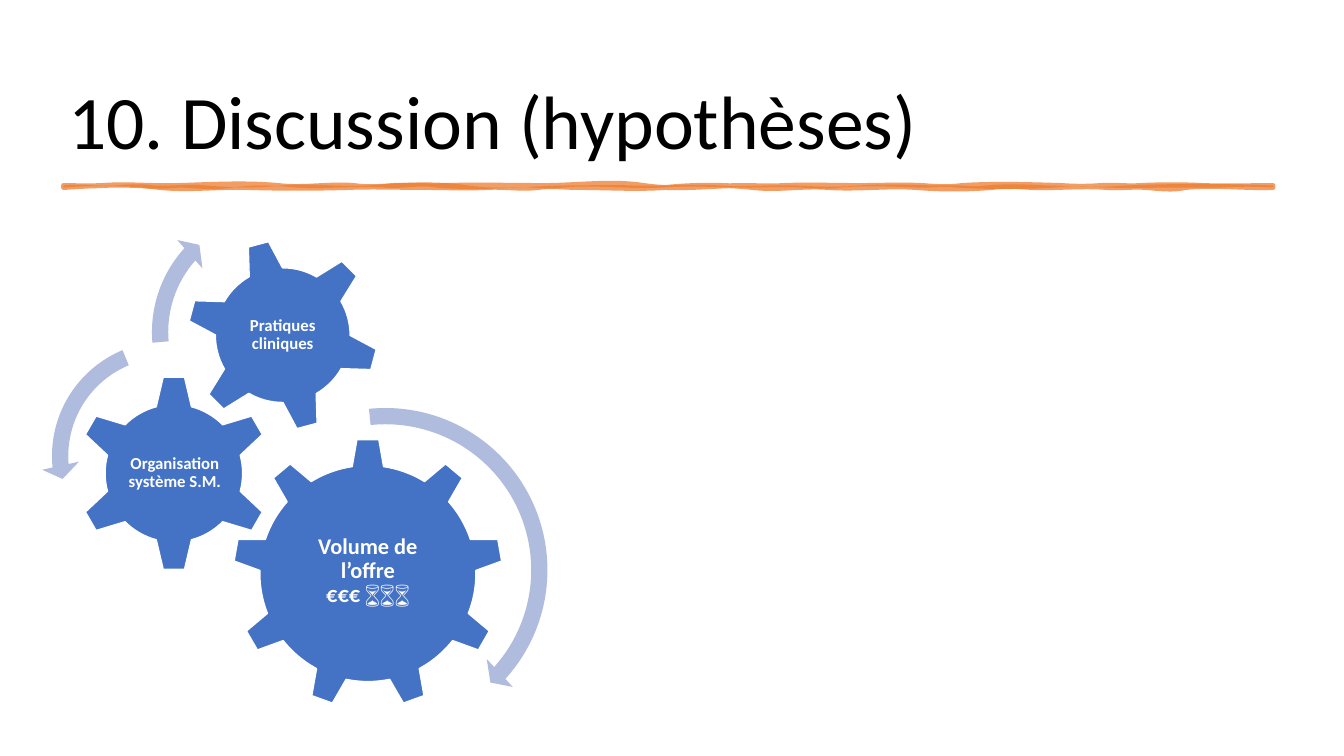
import dataclasses
import lxml.etree
import pptx
import pptx.dml.color
import pptx.enum.shapes
import pptx.enum.text
import pptx.oxml.ns
import pptx.util

Kind = pptx.enum.shapes.MSO_SHAPE
Align = pptx.enum.text.PP_ALIGN
Anchor = pptx.enum.text.MSO_ANCHOR


@dataclasses.dataclass(frozen=True)
class Theme:
    font: str = "Calibri"
    ink: str = "000000"
    white: str = "FFFFFF"
    gear: str = "4472C4"
    arrow: str = "B0BCDE"
    brush: str = "ED7D31"
    alpha: int = 75
    title: int = 54
    large: int = 16
    small: int = 12
    edge: float = 1
    stroke: float = 3.5
    lead: float = 0.9


COLS, ROWS = 160, 90
LEFT, TOP = 7.56, 22.08
WIDE, HIGH = 144, 0.24
STEP, RISE = 0.36, 0.12

LINE = (
    [(13, 0, 1), (25, -2, 1), (33, -1, -3), (25, 3, -2), (13, 2, 1), (17, -1, 1),
     (33, -1, 0), (33, 0, -5), (33, 5, 0), (13, 0, 1), (25, -1, 0), (21, 0, -1),
     (13, 1, 2), (33, -2, -1), (13, 1, 1), (13, -1, 1), (21, -1, -1), (23, 1, 0)],
    [(29, 1, -3), (13, 3, 1), (13, -1, 1), (25, -2, 1), (13, -1, -2), (25, 2, 2),
     (29, -2, 2), (25, -2, 3), (29, -3, -3), (29, 2, 0), (13, 0, -2), (17, 2, -1),
     (21, 1, 0), (25, 0, -1), (33, 1, 1), (29, -1, 3), (32, -4, -2)],
)
BODY = (
    [(17, -2, 1), (13, -1, -2), (17, 1, -2), (25, 2, 3), (29, -3, 2), (33, -3, -5),
     (33, 5, 0), (21, 0, -1), (29, 1, -2), (25, 2, -1), (21, 1, 2), (29, -2, 0),
     (13, -1, 2), (21, -2, -1), (25, 1, 2), (49, -2, -2)],
    [(17, -1, -1), (13, 0, 0), (25, 0, 1), (17, -1, -2), (33, 2, 2), (13, -2, 1),
     (25, -1, -2), (13, 2, 1), (17, -1, 0), (29, 0, -2), (33, 2, -3), (17, 3, -2),
     (25, 2, 2), (17, -3, 2), (29, -2, 2), (21, -2, -3), (17, 3, 1), (13, 1, 2),
     (26, -2, -2)],
)


def trace(col, row, way, waves):
    for width, first, second in waves:
        span = way * width * STEP
        yield [(col + span / 3, row + first * RISE),
               (col + span * 2 / 3, row + second * RISE),
               (col + span, row)]
        col += span


def color(text):
    return pptx.dml.color.RGBColor.from_string(text)


def add(node, name, **attrs):
    return lxml.etree.SubElement(node, pptx.oxml.ns.qn("a:" + name), attrs)


def find(shape, name):
    return list(shape.element.spPr.iter(pptx.oxml.ns.qn("a:" + name)))


def write(frame, text, *, size, ink, font, lead, bold=False,
          align=Align.LEFT, anchor=Anchor.MIDDLE, inset=None):
    frame.word_wrap = True
    frame.vertical_anchor = anchor
    if inset is not None:
        frame.margin_left = frame.margin_right = inset
        frame.margin_top = frame.margin_bottom = inset
    para = frame.paragraphs[0]
    para.text = text
    para.alignment = align
    para.line_spacing = lead
    for run in para.runs:
        run.font.name = font
        run.font.size = pptx.util.Pt(size)
        run.font.bold = bold
        run.font.color.rgb = color(ink)


class Board:
    def __init__(self, deck, theme):
        self.theme = theme
        self.unit = deck.slide_width / COLS
        self.slide = deck.slides.add_slide(deck.slide_layouts[6])
        self.shapes = self.slide.shapes

    def cells(self, *spans):
        return [round(span * self.unit) for span in spans]

    def paint(self, shape, fill, line=None, width=1):
        shape.shadow.inherit = False
        shape.fill.solid()
        shape.fill.fore_color.rgb = color(fill)
        if line:
            shape.line.color.rgb = color(line)
            shape.line.width = pptx.util.Pt(width)
        else:
            shape.line.fill.background()

    def label(self, text, box, **style):
        shape = self.shapes.add_textbox(*self.cells(*box))
        write(shape.text_frame, text, font=self.theme.font,
              lead=self.theme.lead, **style)

    def title(self, text, box):
        self.label(text, box, size=self.theme.title, ink=self.theme.ink,
                   anchor=Anchor.BOTTOM)

    def gear(self, kind, col, row, size, text, box, type_size, turn=0):
        shape = self.shapes.add_shape(kind, *self.cells(col, row, size, size))
        shape.rotation = turn
        self.paint(shape, self.theme.gear, self.theme.white, self.theme.edge)
        self.label(text, box, size=type_size, ink=self.theme.white, bold=True,
                   align=Align.CENTER, inset=pptx.util.Inches(0.02))

    def arrow(self, kind, col, row, size, thick, tip, bends):
        shape = self.shapes.add_shape(kind, *self.cells(col, row, size, size))
        for index, bend in enumerate((thick / 100, *bends, tip / 100)):
            shape.adjustments[index] = bend
        self.paint(shape, self.theme.arrow)

    def spot(self, node, point):
        col, row = self.cells(*point)
        add(node, "pt", x=str(col), y=str(row))

    def curve(self, paths, waves, **flags):
        wide, high = self.cells(WIDE, HIGH)
        route = add(paths, "path", w=str(wide), h=str(high), **flags)
        upper, lower = waves
        self.spot(add(route, "moveTo"), (0, 0))
        for bend in trace(0, 0, 1, upper):
            self.bend(route, bend)
        self.spot(add(route, "lnTo"), (WIDE, HIGH))
        for bend in trace(WIDE, HIGH, -1, lower):
            self.bend(route, bend)
        add(route, "close")

    def bend(self, route, points):
        node = add(route, "cubicBezTo")
        for point in points:
            self.spot(node, point)

    def brush(self):
        right, low = LEFT + WIDE, TOP + HIGH
        build = self.shapes.build_freeform(*self.cells(LEFT, TOP))
        build.add_line_segments([self.cells(right, TOP), self.cells(right, low),
                                 self.cells(LEFT, low)])
        shape = build.convert_to_shape()
        paths = find(shape, "pathLst")[0]
        for old in list(paths):
            paths.remove(old)
        self.curve(paths, LINE, fill="none")
        self.curve(paths, BODY, stroke="0")
        self.paint(shape, self.theme.brush, self.theme.brush, self.theme.stroke)
        for node in find(shape, "srgbClr"):
            add(node, "alpha", val=str(self.theme.alpha * 1000))


def main():
    deck = pptx.Presentation()
    deck.slide_width = pptx.util.Inches(COLS / 12)
    deck.slide_height = pptx.util.Inches(ROWS / 12)
    theme = Theme()
    board = Board(deck, theme)
    board.title("10. Discussion (hypothèses)", (6.96, 8.76, 144.6, 11.52))
    board.brush()
    board.gear(Kind.GEAR_9, 27.72, 52.2, 32.16, "Volume de l’offre\n€€€ ⌛⌛⌛",
               (34.2, 59.76, 19.2, 16.56), theme.large)
    board.gear(Kind.GEAR_6, 9, 44.64, 23.4, "Organisation système S.M.",
               (15, 50.52, 11.64, 11.52), theme.small)
    board.gear(Kind.GEAR_6, 22.2, 28.44, 22.92, "Pratiques cliniques",
               (27.24, 33.48, 12.84, 12.84), theme.small, turn=345)
    board.arrow(Kind.CIRCULAR_ARROW, 25.32, 47.28, 41.16, 4.7, 5.5,
                (2.99, 25.22, 158.49))
    board.arrow(Kind.LEFT_CIRCULAR_ARROW, 4.92, 39.36, 29.88, 6.5, 7.5,
                (4.3, 104.89, 148.38))
    board.arrow(Kind.CIRCULAR_ARROW, 16.8, 23.4, 32.28, 6, 7,
                (3.94, 133.14, 105.08))
    deck.save("out.pptx")


if __name__ == "__main__":
    main()
